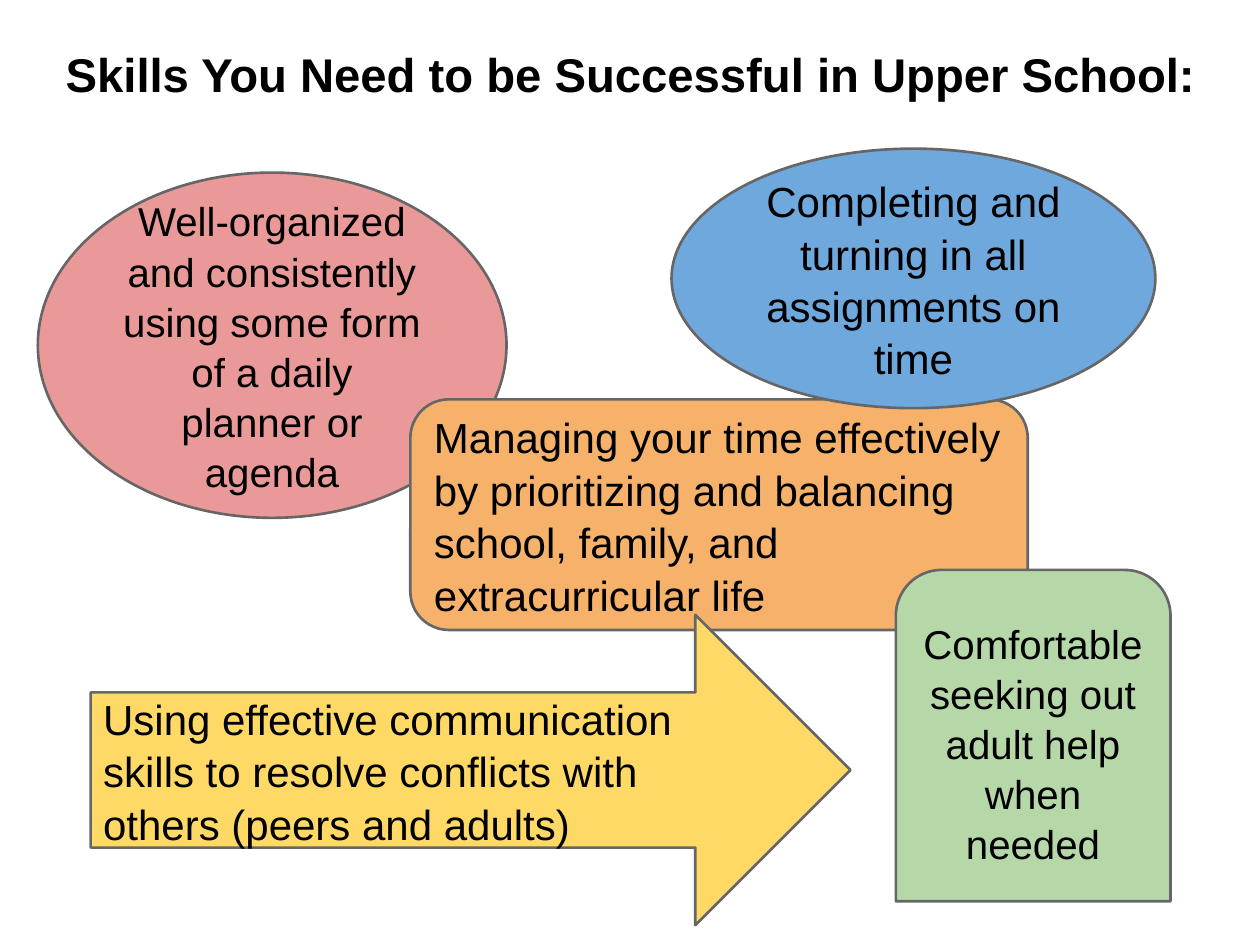
from pptx import Presentation
from pptx.dml.color import RGBColor
from pptx.enum import shapes, text
from pptx.util import Pt

BLACK = RGBColor(0x00, 0x00, 0x00)
GREY = RGBColor(0x66, 0x66, 0x66)
PINK = RGBColor(0xEA, 0x99, 0x99)
ORANGE = RGBColor(0xF6, 0xB2, 0x6B)
BLUE = RGBColor(0x6F, 0xA8, 0xDC)
GREEN = RGBColor(0xB6, 0xD7, 0xA8)
YELLOW = RGBColor(0xFF, 0xD9, 0x66)

KIND = shapes.MSO_SHAPE
LEFT, CENTER = text.PP_ALIGN.LEFT, text.PP_ALIGN.CENTER


def write(shape, wording, size, align=CENTER, bold=False, spacing=1.0):
    frame = shape.text_frame
    frame.word_wrap = True
    frame.auto_size = text.MSO_AUTO_SIZE.NONE
    frame.vertical_anchor = text.MSO_ANCHOR.MIDDLE
    frame.margin_left = frame.margin_right = Pt(7.2)
    frame.margin_top = frame.margin_bottom = Pt(7.2)
    paragraph = frame.paragraphs[0]
    paragraph.alignment = align
    paragraph.line_spacing = spacing
    run = paragraph.add_run()
    run.text = wording
    run.font.name = "Arial"
    run.font.size = Pt(size)
    run.font.bold = bold
    run.font.color.rgb = BLACK


presentation = Presentation()
presentation.slide_width, presentation.slide_height = Pt(720), Pt(540)
slide = presentation.slides.add_slide(presentation.slide_layouts[5])

# Title
title = slide.shapes.title
title.left, title.top, title.width, title.height = Pt(23.75), Pt(7.2), Pt(673.2), Pt(69.8)
write(title, "Skills You Need to be Successful in Upper School:", 27, bold=True)

# Skills, from back to front: kind, box, fill, size, alignment, wording
skills = [
    (KIND.OVAL, (21.6, 98.64, 267.84, 197.28), PINK, 23, CENTER,
     "Well-organized and consistently using some form of a daily planner or agenda"),
    (KIND.ROUNDED_RECTANGLE, (234.5, 228.24, 352.8, 131.76), ORANGE, 24, LEFT,
     "Managing your time effectively by prioritizing and balancing school, family, "
     "and extracurricular life"),
    (KIND.OVAL, (383.76, 84.96, 276.48, 148.32), BLUE, 24, CENTER,
     "Completing and turning in all assignments on time"),
    (KIND.ROUND_2_SAME_RECTANGLE, (511.92, 325.7, 156.96, 189.36), GREEN, 23, CENTER,
     "Comfortable seeking out adult help when needed"),
    (KIND.RIGHT_ARROW, (51.84, 351.36, 434.16, 177.3), YELLOW, 24, LEFT,
     "Using effective communication skills to resolve conflicts with others "
     "(peers and adults)"),
]
for kind, box, fill, size, align, wording in skills:
    shape = slide.shapes.add_shape(kind, *[Pt(length) for length in box])
    shape.shadow.inherit = False
    shape.fill.solid()
    shape.fill.fore_color.rgb = fill
    shape.line.color.rgb = GREY
    shape.line.width = Pt(1.5)
    write(shape, wording, size, align=align, spacing=1.04)

presentation.save("out.pptx")
